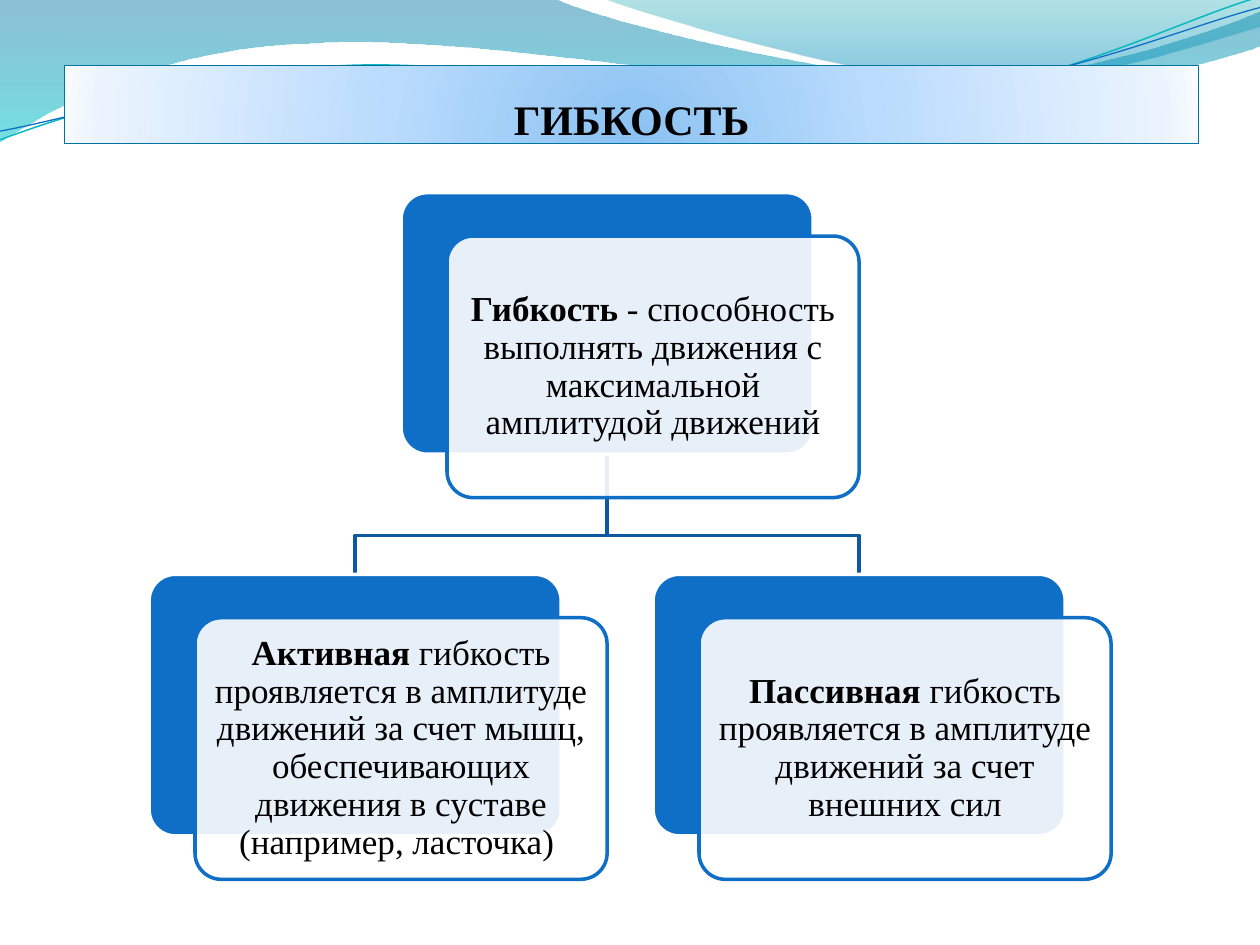
from lxml.etree import SubElement
from pptx import Presentation
from pptx.dml.color import RGBColor
from pptx.enum.shapes import MSO_SHAPE as Shape
from pptx.enum.text import MSO_ANCHOR as Anchor, PP_ALIGN as Align
from pptx.oxml import parse_xml
from pptx.oxml.ns import nsdecls, qn
from pptx.util import Pt

THEME = {
    "font": "Times New Roman",
    "title_size": 24,
    "body_size": 20,
    "text": "000000",
    "card": "0F6FC6",
    "panel": "FFFFFF",
    "link": "0C599F",
    "title_line": "0074A1",
    "title_stops": [(0, "8BC2F1", 100), (43, "B9DBFD", 100), (93, "EAF3FE", 100), (100, "F8FBFF", 100)],
    "left_wave_stops": [(0, "0074A1", 45), (100, "00C6CF", 55)],
    "right_wave_stops": [(0, "00A1A9", 30), (80, "008BBF", 45)],
    "teal_line": "0AB8BF",
    "blue_line": "0F6FC6",
}

TITLE = "ГИБКОСТЬ"
ROOT = ("Гибкость", " - способность выполнять движения с максимальной амплитудой движений")
CHILDREN = [
    ("Активная", " гибкость проявляется в амплитуде движений за счет мышц, "
                 "обеспечивающих движения в суставе (например, ласточка) "),
    ("Пассивная", " гибкость проявляется в амплитуде движений за счет внешних сил"),
]

FILLED_WAVES = [
    ("left_wave_stops", (-0.5, -0.5), [
        (316.8, -0.7), (343, 12, 478, 45, 546, 45.4), (614, 45.4, 690, 19, 720, 6.5), (720.7, 26),
        (708, 32, 626, 55, 537, 54), (448, 54, 275, 20, 185, 24.5), (93, 26, 33, 60, -0.7, 81.4)]),
    ("right_wave_stops", (344.9, -0.7), [
        (366.5, 8, 491, 44.6, 553.7, 46.8), (616.3, 49.7, 692, 23, 720, 15.1), (720, 0)]),
]
LINE_WAVES = [
    ("teal_line", 0.85, (0, 79.9), [
        (34.6, 67, 113.8, 41, 199.4, 37.4), (284.4, 33.8, 427, 64.1, 513.4, 57.6),
        (599.8, 51.1, 675.4, 10.8, 718.6, -1.4)]),
    ("blue_line", 0.75, (0, 74.9), [
        (33.8, 69.1, 118.1, 43.9, 203.8, 40.3), (290.2, 36.7, 429.8, 60.5, 516.2, 54),
        (601.9, 48.2, 677.5, 15.1, 720, 4.3)]),
]

SLIDE_SIZE = (720, 540)
TITLE_BOX = (37, 37.4, 648, 44.6)
CARD_SIZE = (235.5, 149.5)
PANEL_SHIFT = (26.2, 24.8)
ROOT_CENTER, ROOT_TOP = 347, 110.1
CHILD_TOP, CHILD_STEP, BEND_RISE = 328.2, 288, 22.2


def color(name):
    return RGBColor.from_string(THEME[name])


def set_line(shape, name, width):
    shape.line.color.rgb = color(name)
    shape.line.width = Pt(width)


def set_gradient(shape, stops, direction):
    stop_xml = "".join(
        f'<a:gs pos="{position * 1000}"><a:srgbClr val="{value}">'
        f'<a:alpha val="{opacity * 1000}"/></a:srgbClr></a:gs>'
        for position, value, opacity in stops)
    shape.fill.solid()
    properties = shape._element.spPr
    properties.replace(
        properties.find(qn("a:solidFill")),
        parse_xml(f'<a:gradFill {nsdecls("a")} rotWithShape="1">'
                  f"<a:gsLst>{stop_xml}</a:gsLst>{direction}</a:gradFill>"))


def add_run(paragraph, text, size, bold):
    run = paragraph.add_run()
    run.text = text
    run.font.name = THEME["font"]
    run.font.size = Pt(size)
    run.font.bold = bold
    run.font.color.rgb = color("text")


def add_outline(slide, start, segments, close):
    points = [(Pt(segment[i]), Pt(segment[i + 1]))
              for segment in segments for i in range(0, len(segment), 2)]
    builder = slide.shapes.build_freeform(*map(Pt, start))
    builder.add_line_segments(points, close=close)
    shape = builder.convert_to_shape()
    shape.shadow.inherit = False
    steps = shape._element.spPr.iter(qn("a:lnTo"))
    bend_segments(list(steps), segments)
    return shape


def bend_segments(steps, segments):
    remaining = iter(steps)
    for segment in segments:
        first = next(remaining)
        if len(segment) == 6:
            first.tag = qn("a:cubicBezTo")
            for _ in range(2):
                step = next(remaining)
                first.append(step[0])
                step.getparent().remove(step)


def add_open_line(slide, start, segments, name, width):
    shape = add_outline(slide, start, segments, False)
    shape.fill.background()
    set_line(shape, name, width)


def add_waves(slide):
    for stops, start, segments in FILLED_WAVES:
        wave = add_outline(slide, start, segments, True)
        set_gradient(wave, THEME[stops], '<a:lin ang="5400000" scaled="1"/>')
        wave.line.fill.background()
    for name, width, start, segments in LINE_WAVES:
        add_open_line(slide, start, segments, name, width)


def add_title(slide):
    title = slide.shapes.title
    slide.shapes._spTree.append(title._element)
    title.left, title.top, title.width, title.height = map(Pt, TITLE_BOX)
    set_gradient(title, THEME["title_stops"],
                 '<a:path path="circle"><a:fillToRect l="50000" t="130000" r="50000" b="-30000"/></a:path>')
    set_line(title, "title_line", 0.75)
    frame = title.text_frame
    frame.vertical_anchor = Anchor.BOTTOM
    frame.margin_left = frame.margin_right = frame.margin_bottom = 0
    frame.margin_top = Pt(3.6)
    paragraph = frame.paragraphs[0]
    paragraph.alignment = Align.CENTER
    add_run(paragraph, TITLE, THEME["title_size"], True)


def add_round_box(slide, left, top, fill, line):
    box = slide.shapes.add_shape(Shape.ROUNDED_RECTANGLE, *map(Pt, (left, top, *CARD_SIZE)))
    box.adjustments[0] = 0.1
    box.shadow.inherit = False
    box.fill.solid()
    box.fill.fore_color.rgb = color(fill)
    set_line(box, line, 2)
    return box


def add_card(slide, center, top, texts):
    left = center - CARD_SIZE[0] / 2
    add_round_box(slide, left, top, "card", "panel")
    panel = add_round_box(slide, left + PANEL_SHIFT[0], top + PANEL_SHIFT[1], "panel", "card")
    fill_color = panel._element.spPr.find(qn("a:solidFill"))[0]
    SubElement(fill_color, qn("a:alpha")).set("val", "90000")
    frame = panel.text_frame
    frame.word_wrap = True
    frame.vertical_anchor = Anchor.MIDDLE
    frame.margin_left = frame.margin_right = frame.margin_top = frame.margin_bottom = Pt(6)
    paragraph = frame.paragraphs[0]
    paragraph.alignment = Align.CENTER
    paragraph.line_spacing = 0.9
    for text, bold in zip(texts, (True, False)):
        add_run(paragraph, text, THEME["body_size"], bold)


def add_hierarchy(slide):
    first_center = ROOT_CENTER - CHILD_STEP * (len(CHILDREN) - 1) / 2
    centers = [first_center + CHILD_STEP * index for index in range(len(CHILDREN))]
    bend = CHILD_TOP - BEND_RISE
    for center in reversed(centers):
        add_open_line(slide, (ROOT_CENTER, ROOT_TOP + CARD_SIZE[1]),
                      [(ROOT_CENTER, bend), (center, bend), (center, CHILD_TOP)], "link", 2)
    add_card(slide, ROOT_CENTER, ROOT_TOP, ROOT)
    for center, texts in zip(centers, CHILDREN):
        add_card(slide, center, CHILD_TOP, texts)


def main():
    presentation = Presentation()
    presentation.slide_width, presentation.slide_height = map(Pt, SLIDE_SIZE)
    slide = presentation.slides.add_slide(presentation.slide_layouts[5])
    add_waves(slide)
    add_title(slide)
    add_hierarchy(slide)
    presentation.save("out.pptx")


if __name__ == "__main__":
    main()
